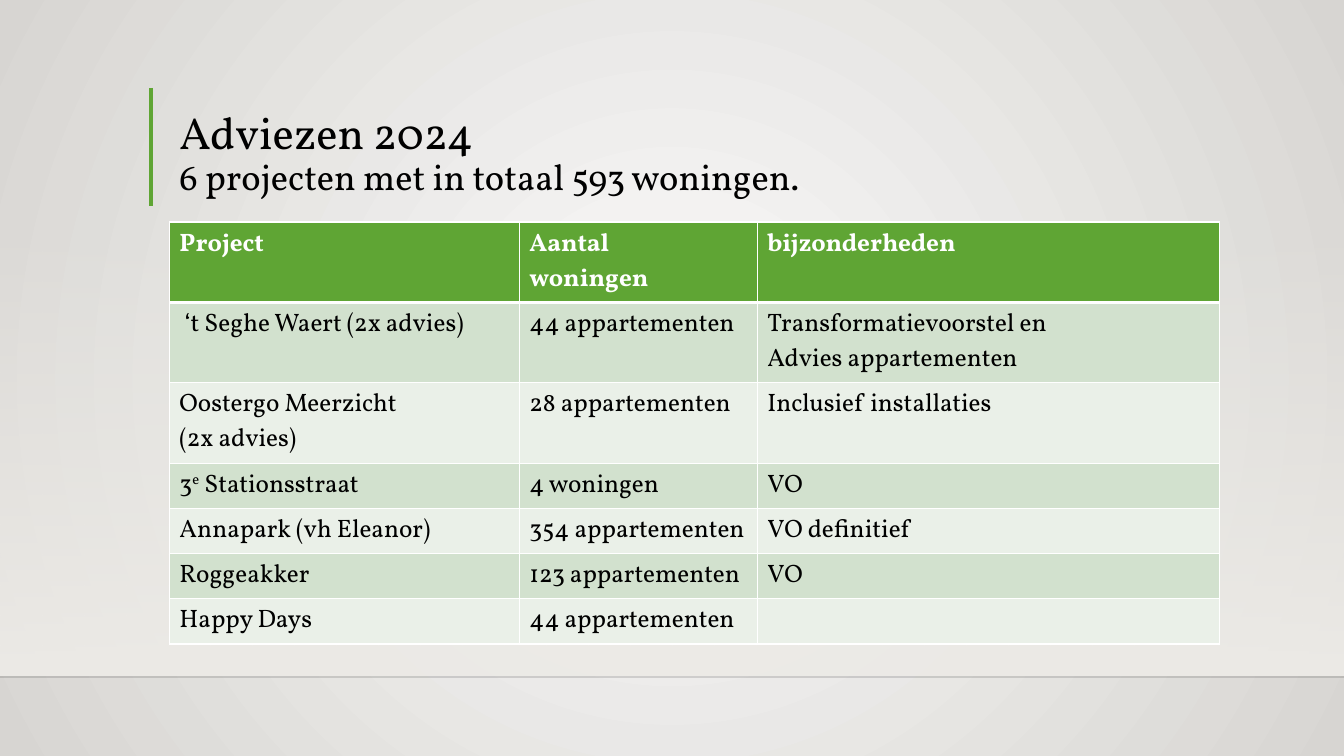
from dataclasses import dataclass

from lxml import etree
from pptx import Presentation
from pptx.dml.color import RGBColor
from pptx.enum import dml, shapes, text
from pptx.oxml import ns
from pptx.util import Pt


@dataclass(frozen=True)
class Theme:
    font: str = "Vollkorn"
    title_size: int = 32
    subtitle_size: int = 26
    table_size: int = 18
    ink: RGBColor = RGBColor.from_string("000000")
    white: RGBColor = RGBColor.from_string("FFFFFF")
    accent: RGBColor = RGBColor.from_string("5FA534")
    bands: tuple = (RGBColor.from_string("D2E1CE"), RGBColor.from_string("EAF0E8"))
    glow: RGBColor = RGBColor.from_string("FAFAF9")
    edge: RGBColor = RGBColor.from_string("D7D5D2")
    wall: RGBColor = RGBColor.from_string("EDEBE7")
    floor: RGBColor = RGBColor.from_string("000001")


def add(parent, tag, **attributes):
    return etree.SubElement(parent, ns.qn(tag), attributes)


def style(paragraph, size, color, bold=False):
    """Format the runs, and give line breaks the same size and font."""
    for run in paragraph.runs:
        run.font.name = theme.font
        run.font.size = Pt(size)
        run.font.bold = bold
        run.font.color.rgb = color
    for line_break in paragraph._p.findall(ns.qn("a:br")):
        properties = add(line_break, "a:rPr", sz=str(size * 100))
        add(properties, "a:latin", typeface=theme.font)


theme = Theme()
prs = Presentation()
prs.slide_width, prs.slide_height = Pt(960), Pt(540)
slide = prs.slides.add_slide(prs.slide_layouts[5])

# Background: light centre, darker edges
backdrop = slide.background.fill
backdrop.gradient()
for stop, color in zip(backdrop.gradient_stops, (theme.glow, theme.edge)):
    stop.color.rgb = color
gradient = slide.element.xpath(".//p:bg//a:gradFill")[0]
gradient.remove(gradient.find(ns.qn("a:lin")))
circle = add(gradient, "a:path", path="circle")
add(circle, "a:fillToRect", l="50000", t="50000", r="50000", b="50000")

# Wall that fades in towards the floor line
wall = slide.shapes.add_shape(
    shapes.MSO_SHAPE.RECTANGLE, Pt(0), Pt(158.4), Pt(960), Pt(324))
wall.shadow.inherit = False
wall.line.fill.background()
wall.fill.gradient()
wall.fill.gradient_angle = 270
for stop in wall.fill.gradient_stops:
    stop.color.rgb = theme.wall
add(wall._element.xpath(".//a:gs/a:srgbClr")[0], "a:alpha", val="0")

# Floor line and title bar
for x1, y1, x2, y2, color, width, opacity in (
    (0, 483.6, 960, 483.6, theme.floor, 1, 20),
    (108, 62.8, 108, 147, theme.accent, 3, 100),
):
    rule = slide.shapes.add_connector(
        shapes.MSO_CONNECTOR.STRAIGHT, Pt(x1), Pt(y1), Pt(x2), Pt(y2))
    rule.line.color.rgb = color
    rule.line.width = Pt(width)
    add(rule._element.spPr, "a:effectLst")
    if opacity < 100:
        ink = rule._element.xpath(".//a:ln//a:srgbClr")[0]
        add(ink, "a:alpha", val=str(opacity * 1000))

# Title
title = slide.shapes.title
title.left, title.top, title.width, title.height = Pt(121), Pt(63.4), Pt(750), Pt(82)
frame = title.text_frame
frame.word_wrap = True
frame.auto_size = text.MSO_AUTO_SIZE.NONE
frame.vertical_anchor = text.MSO_ANCHOR.BOTTOM
frame.text = "Adviezen 2024\v6 projecten met in totaal 593 woningen."
heading = frame.paragraphs[0]
heading.alignment = text.PP_ALIGN.LEFT
heading.line_spacing = 0.9
style(heading, theme.title_size, theme.ink)
heading.runs[1].font.size = Pt(theme.subtitle_size)

# Projects
projects = (
    ("Project", "Aantal \vwoningen", "bijzonderheden"),
    (" ‘t Seghe Waert (2x advies)", "44 appartementen",
     "Transformatievoorstel en\nAdvies appartementen"),
    ("Oostergo Meerzicht \v(2x advies)", "28 appartementen", "Inclusief installaties"),
    ("3e Stationsstraat", "4 woningen", "VO"),
    ("Annapark (vh Eleanor)", "354 appartementen", "VO definitief"),
    ("Roggeakker", "123 appartementen", "VO"),
    ("Happy Days", "44 appartementen", ""),
)
table = slide.shapes.add_table(
    len(projects), 3, Pt(121), Pt(158.6), Pt(750), Pt(301.4)).table
for column, width in zip(table.columns, (250, 170, 330)):
    column.width = Pt(width)

for r, project in enumerate(projects):
    is_header = r == 0
    table.rows[r].height = Pt(57.4 if r < 3 else 32.3)
    for c, content in enumerate(project):
        cell = table.cell(r, c)
        properties = cell._tc.get_or_add_tcPr()
        for side in "LRTB":
            thick = (r, side) in ((0, "B"), (1, "T"))
            border = add(properties, f"a:ln{side}", w=str(Pt(3 if thick else 1)))
            fill = add(border, "a:solidFill")
            add(fill, "a:srgbClr", val=str(theme.white))
        cell.fill.solid()
        cell.fill.fore_color.rgb = theme.accent if is_header else theme.bands[(r - 1) % 2]
        cell.text_frame.text = content
        if content.startswith("3e "):
            ordinal = cell.text_frame.paragraphs[0]
            ordinal.text = "3"
            ordinal.add_run().text = "e"
            ordinal.add_run().text = " Stationsstraat"
            ordinal.runs[1]._r.get_or_add_rPr().set("baseline", "30000")
        for paragraph in cell.text_frame.paragraphs:
            style(paragraph, theme.table_size,
                  theme.white if is_header else theme.ink, is_header)

prs.save("out.pptx")
